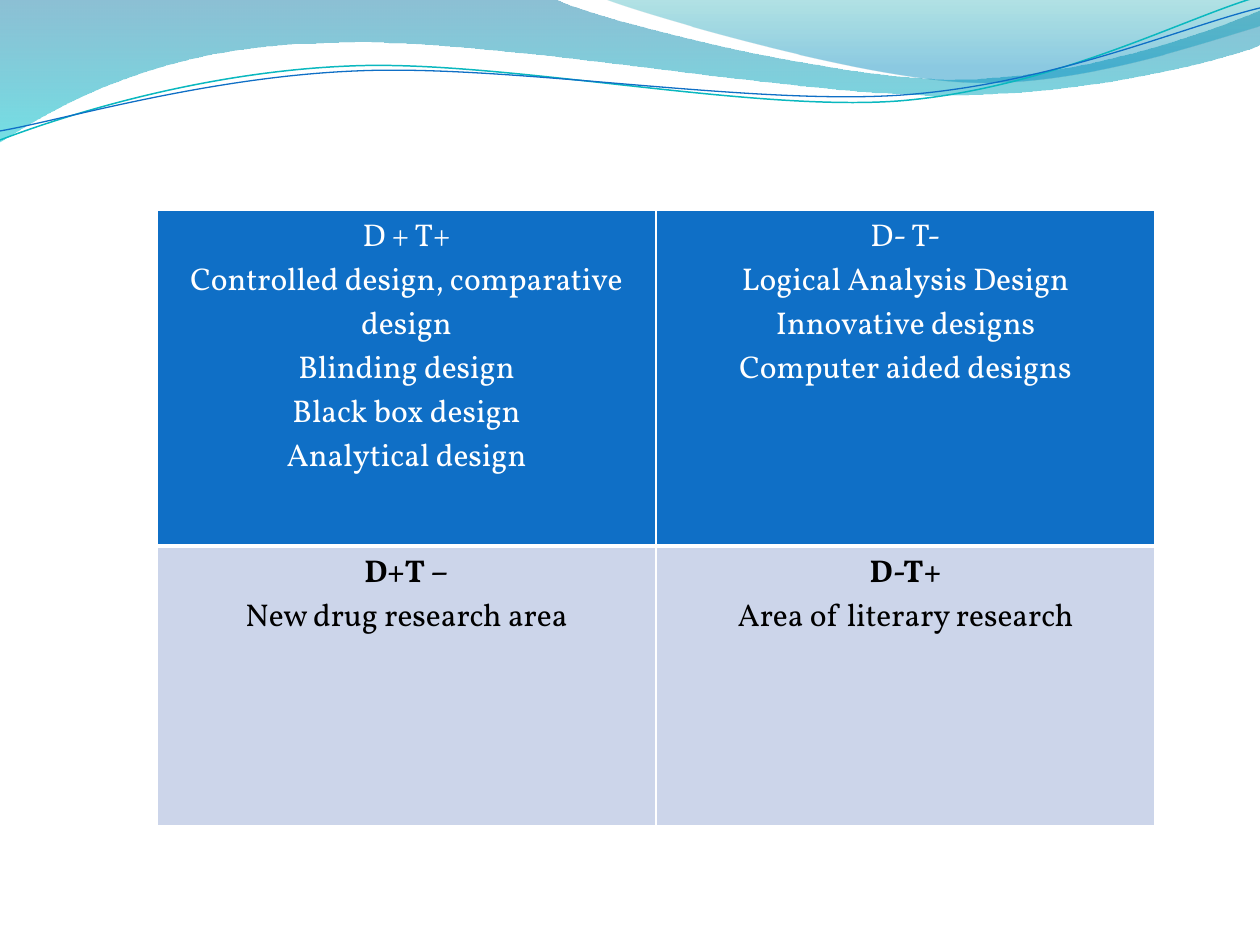
from lxml.etree import Element, SubElement as Sub
from pptx import Presentation
from pptx.dml.color import RGBColor as RGB
from pptx.enum.text import PP_ALIGN as Align
from pptx.oxml.ns import qn
from pptx.util import Pt

SCALE = 914400 / 126


def px(n):
    return round(n * SCALE)


def rgb(text):
    return RGB.from_string(text)


class Deck:
    font, size = "Vollkorn", 18
    white, black = "FFFFFF", "000000"

    def __init__(self, wide, high):
        self.prs = Presentation()
        self.prs.slide_width, self.prs.slide_height = px(wide), px(high)
        self.slide = self.prs.slides.add_slide(self.prs.slide_layouts[6])
        back = self.slide.background.fill
        back.solid()
        back.fore_color.rgb = rgb(self.white)

    def outline(self, nodes, close):
        """Draw through nodes: two numbers are a line, six a cubic curve."""
        first, *rest = [(px(n[-2]), px(n[-1])) for n in nodes]
        pen = self.slide.shapes.build_freeform(*first, scale=1.0)
        pen.add_line_segments(rest, close=close)
        shape = pen.convert_to_shape()
        shape.shadow.inherit = False
        parts = list(shape._element.iter(qn("a:lnTo")))
        for part, node in zip(parts, nodes[1:]):
            if len(node) == 6:
                self.bend(shape, part, node)
        return shape

    def bend(self, shape, part, node):
        """Swap a straight part for a cubic curve with the same end."""
        arc = Element(qn("a:cubicBezTo"))
        for x, y in (node[:2], node[2:4]):
            Sub(arc, qn("a:pt"), x=str(px(x) - shape.left),
                y=str(px(y) - shape.top))
        arc.append(part[0])
        part.getparent().replace(part, arc)

    def wave(self, nodes, stops):
        """Filled band; each stop is position, colour, opacity in percent."""
        shape = self.outline(nodes, True)
        shape.line.fill.background()
        shape.fill.gradient()
        shape.fill.gradient_angle = 270
        for stop, (pos, color, _) in zip(shape.fill.gradient_stops, stops):
            stop.position = pos / 100
            stop.color.rgb = rgb(color)
        tones = list(shape._element.iter(qn("a:srgbClr")))
        for tone, (_, _, alpha) in zip(tones, stops):
            Sub(tone, qn("a:alpha"), val=str(alpha * 1000))

    def curve(self, nodes, color, width):
        shape = self.outline(nodes, False)
        shape.fill.background()
        shape.line.color.rgb = rgb(color)
        shape.line.width = Pt(width)

    def border(self, cell, color, widths):
        props = cell._tc.get_or_add_tcPr()
        for side, width in zip("LRTB", widths):
            edge = Sub(props, qn("a:ln" + side), w=str(Pt(width)))
            Sub(Sub(edge, qn("a:solidFill")), qn("a:srgbClr"), val=color)

    def cell(self, cell, lines, fill, ink, head, base):
        cell.margin_left = cell.margin_right = px(3)
        cell.margin_top, cell.margin_bottom = px(7), px(6)
        self.border(cell, self.white, (1, 1, 1, base))
        cell.fill.solid()
        cell.fill.fore_color.rgb = rgb(fill)
        cell.text_frame.text = "\n".join(lines)
        for i, para in enumerate(cell.text_frame.paragraphs):
            para.alignment = Align.CENTER
            for run in para.runs:
                font = run.font
                font.name, font.size = self.font, Pt(self.size)
                font.bold = head and i == 0
                font.color.rgb = rgb(ink)

    def table(self, x, y, cols, rows, looks, cells):
        grid = self.slide.shapes.add_table(
            len(rows), len(cols), px(x), px(y),
            px(sum(cols)), px(sum(rows))).table
        for col, wide in zip(grid.columns, cols):
            col.width = px(wide)
        for row, high, look, texts in zip(grid.rows, rows, looks, cells):
            row.height = px(high)
            for cell, lines in zip(row.cells, texts):
                self.cell(cell, lines, *look)


def main():
    deck = Deck(1260, 945)

    # Gradient waves along the top
    deck.wave([(0, 0), (554, -1),
               (600, 21, 837, 79, 955, 79),
               (1075, 79, 1207, 33, 1260, 11),
               (1261, 45),
               (1239, 55, 1096, 96, 940, 95),
               (784, 95, 481, 35, 324, 43),
               (163, 45, 58, 105, -1, 142)],
              [(0, "0074A1", 45), (100, "00C6CF", 55)])
    deck.wave([(604, -1),
               (641, 14, 859, 78, 969, 82),
               (1079, 87, 1211, 40, 1260, 26),
               (1260, 0)],
              [(0, "00A1A9", 30), (80, "008BBF", 45)])

    # Thin curves below the waves
    deck.curve([(0, 140),
                (60, 117, 199, 72, 349, 66),
                (498, 59, 747, 112, 898, 101),
                (1050, 89, 1182, 19, 1257, -3)], "0AB8BF", 0.85)
    deck.curve([(0, 131),
                (59, 121, 207, 77, 356, 71),
                (508, 64, 752, 106, 903, 95),
                (1053, 84, 1185, 26, 1260, 8)], "0F6FC6", 0.75)

    # Design matrix
    looks = [("0F6FC6", deck.white, False, 3),
             ("CCD5EA", deck.black, True, 1)]
    deck.table(157, 210, [499, 499], [336, 280], looks, [
        [["D + T+", "Controlled design, comparative design",
          "Blinding design", "Black box design", "Analytical design"],
         ["D- T-", "Logical Analysis Design", "Innovative designs",
          "Computer aided designs"]],
        [["D+T –", "New drug research area"],
         ["D-T+", "Area of literary research"]],
    ])

    deck.prs.save("out.pptx")


if __name__ == "__main__":
    main()
